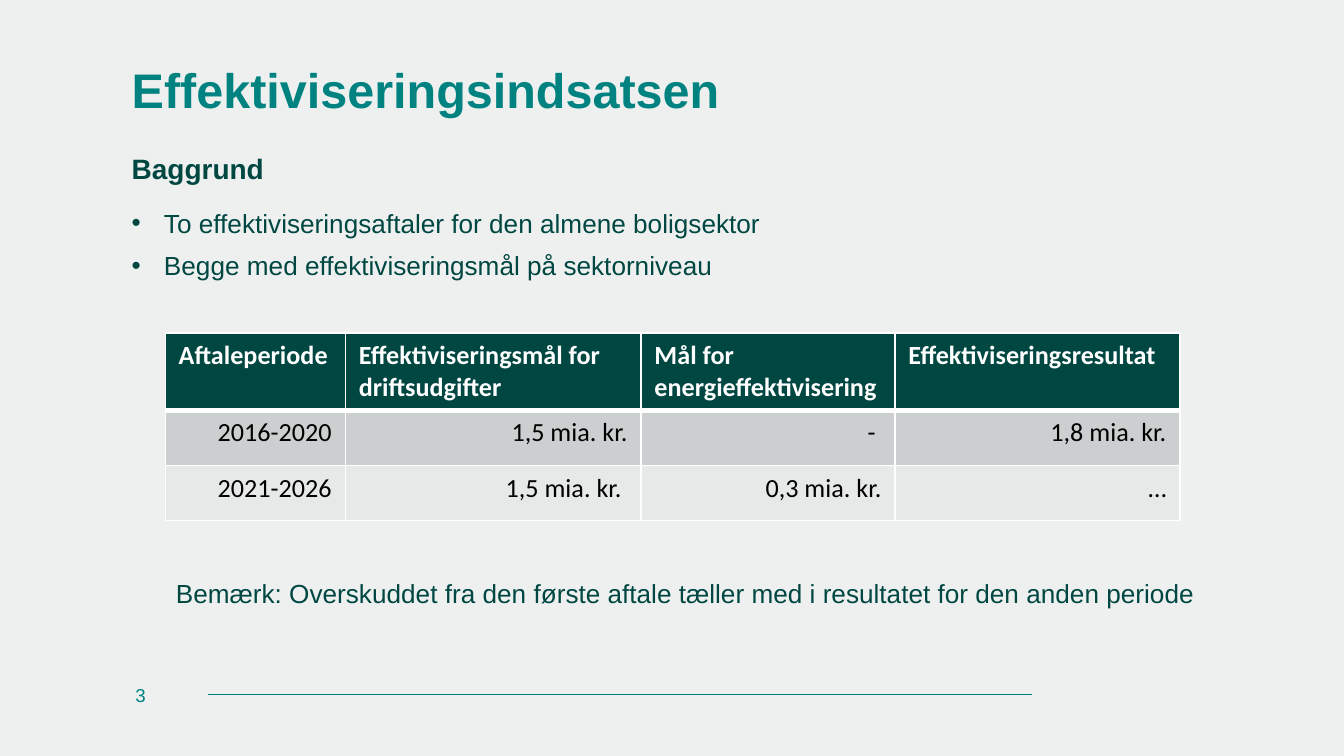
from lxml.etree import SubElement
from pptx import Presentation
from pptx.dml.color import RGBColor
from pptx.enum.shapes import MSO_CONNECTOR
from pptx.enum.text import MSO_ANCHOR as ANCHOR, PP_ALIGN as ALIGN
from pptx.oxml.ns import qn
from pptx.util import Inches, Pt

COLORS = {
    "background": "EEF0F0", "teal": "008380", "rule": "00807D", "dark": "004742",
    "white": "FFFFFF", "black": "000000", "band1": "CCCFCF", "band2": "E7E9E9",
}
COL_WIDTHS = [1.34, 2.2, 1.89, 2.12]
ROW_HEIGHTS = [0.56, 0.41, 0.41]
ROWS = [
    ["Aftaleperiode", "Effektiviseringsmål for driftsudgifter",
     "Mål for energieffektivisering", "Effektiviseringsresultat"],
    ["2016-2020", "1,5 mia. kr.", " - ", "1,8 mia. kr."],
    ["2021-2026", "1,5 mia. kr. ", "0,3 mia. kr.", "  …"],
]


def rgb(name):
    return RGBColor.from_string(COLORS[name])


def style(p, size, color, bold=False, font="Arial", align=ALIGN.LEFT):
    p.alignment = align
    for r in p.runs:
        r.font.name, r.font.size, r.font.bold = font, Pt(size), bold
        r.font.color.rgb = rgb(color)


def set_bullet(p, indent):
    pPr = p._p.get_or_add_pPr()
    pPr.set("marL", str(Inches(indent)))
    pPr.set("indent", str(-Inches(indent)))
    if indent:
        SubElement(pPr, qn("a:buFont"), typeface="Arial")
        SubElement(pPr, qn("a:buChar"), char="•")
    else:
        SubElement(pPr, qn("a:buNone"))


def fill_placeholder(sp, box, lines, size, color, bold=False, indent=0, right=0):
    sp.left, sp.top, sp.width, sp.height = map(Inches, box)
    tf = sp.text_frame
    tf.margin_left, tf.margin_right = 0, Inches(right)
    tf.vertical_anchor = ANCHOR.TOP
    tf.text = "\n".join(lines)
    for i, p in enumerate(tf.paragraphs):
        set_bullet(p, indent)
        p.space_before = Pt(6 if i else 0)
        style(p, size, color, bold)


def add_text(s, box, text, size, color, wrap=False, anchor=ANCHOR.TOP):
    tf = s.shapes.add_textbox(*map(Inches, box)).text_frame
    tf.word_wrap, tf.vertical_anchor = wrap, anchor
    tf.text = text
    style(tf.paragraphs[0], size, color)


def add_rule(s, x1, x2, y):
    line = s.shapes.add_connector(
        MSO_CONNECTOR.STRAIGHT, Inches(x1), Inches(y), Inches(x2), Inches(y))
    line.line.color.rgb, line.line.width = rgb("rule"), Pt(0.75)
    SubElement(line._element.spPr, qn("a:effectLst"))


def set_borders(cell, bottom, top):
    tcPr = cell._tc.get_or_add_tcPr()
    for side, width in (("L", 1), ("R", 1), ("T", top), ("B", bottom)):
        ln = SubElement(tcPr, qn(f"a:ln{side}"), w=str(Pt(width)))
        fill = SubElement(ln, qn("a:solidFill"))
        SubElement(fill, qn("a:srgbClr"), val=COLORS["white"])


def add_goal_table(s, x, y):
    table = s.shapes.add_table(
        len(ROWS), len(COL_WIDTHS), Inches(x), Inches(y),
        Inches(sum(COL_WIDTHS)), Inches(sum(ROW_HEIGHTS))).table
    for col, width in zip(table.columns, COL_WIDTHS):
        col.width = Inches(width)
    fills = ["dark", "band1", "band2"]
    for i, (row, texts) in enumerate(zip(table.rows, ROWS)):
        row.height = Inches(ROW_HEIGHTS[i])
        header = i == 0
        for cell, text in zip(row.cells, texts):
            set_borders(cell, 3 if header else 1, 3 if i == 1 else 1)
            cell.fill.solid()
            cell.fill.fore_color.rgb = rgb(fills[i])
            cell.text = text
            style(cell.text_frame.paragraphs[0], 14, "white" if header else "black",
                  header, "Calibri", ALIGN.LEFT if header else ALIGN.RIGHT)


def main():
    """Build the slide on the efficiency agreements and save it."""
    prs = Presentation()
    prs.slide_width, prs.slide_height = Inches(10), Inches(10 * 9 / 16)
    s = prs.slides.add_slide(prs.slide_layouts[3])
    s.background.fill.solid()
    s.background.fill.fore_color.rgb = rgb("background")
    title, heading, body = s.placeholders
    fill_placeholder(title, (0.98, 0.4, 8.04, 0.62),
                     ["Effektiviseringsindsatsen"], 26, "teal", bold=True)
    fill_placeholder(heading, (0.98, 1.08, 8.04, 0.55), ["Baggrund"], 15, "dark", bold=True)
    fill_placeholder(body, (0.98, 1.49, 8.04, 1.95),
                     ["To effektiviseringsaftaler for den almene boligsektor",
                      "Begge med effektiviseringsmål på sektorniveau"],
                     14, "dark", indent=0.24, right=0.1)
    add_goal_table(s, 1.23, 2.48)
    add_text(s, (1.21, 4.25, 7.82, 0.34),
             "Bemærk: Overskuddet fra den første aftale tæller med i resultatet "
             "for den anden periode", 14, "dark")
    add_text(s, (0.91, 5.02, 0.47, 0.3), "3", 10, "teal", wrap=True, anchor=ANCHOR.MIDDLE)
    add_rule(s, 1.55, 7.68, 5.17)
    prs.save("out.pptx")


if __name__ == "__main__":
    main()
